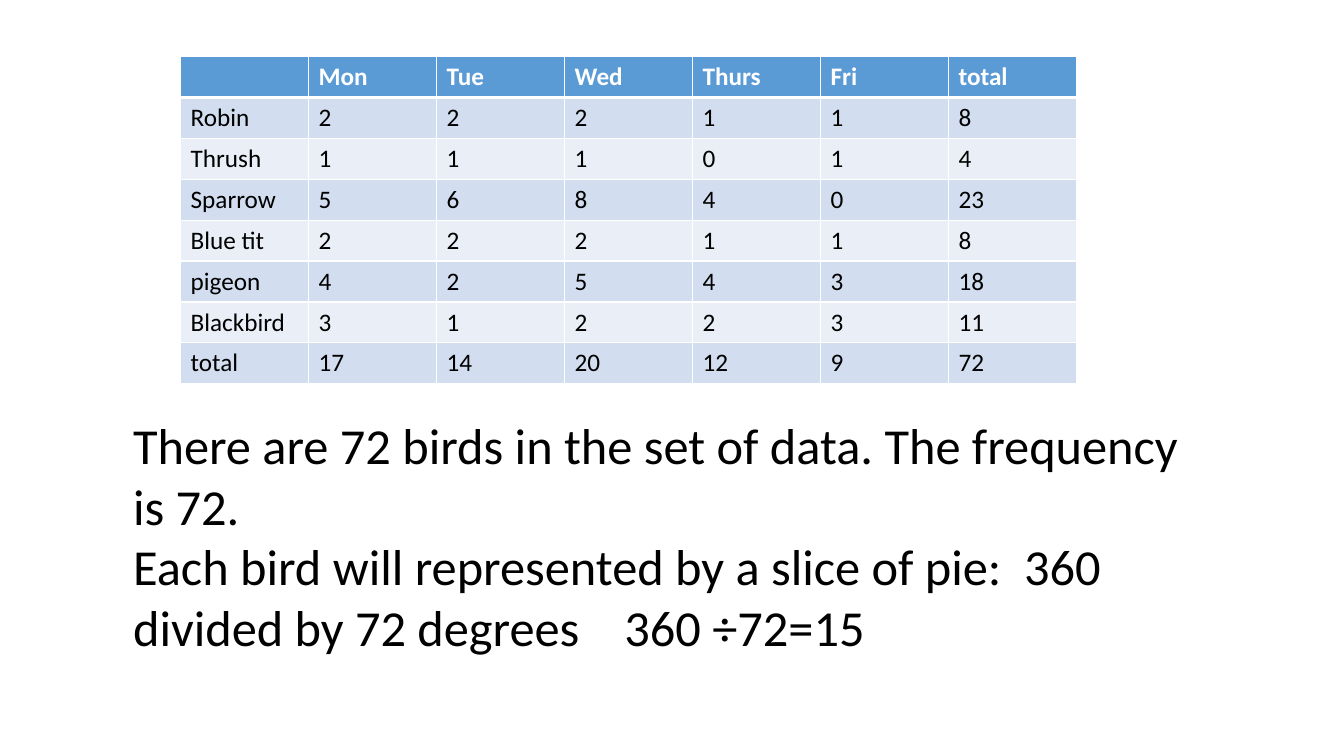
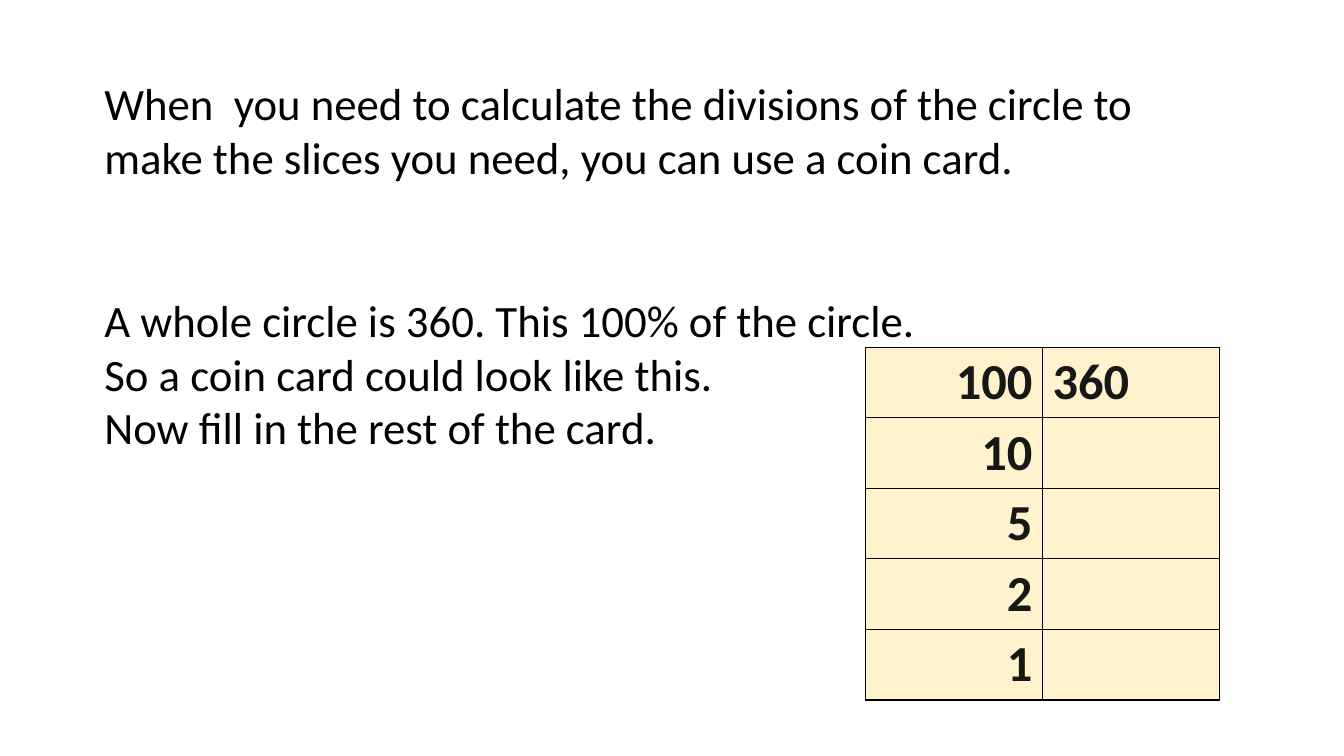
from lxml.etree import SubElement
from pptx import Presentation
from pptx.dml.color import RGBColor
from pptx.enum.text import MSO_ANCHOR, PP_ALIGN
from pptx.oxml.ns import qn
from pptx.util import Pt

FONT = "Calibri"
COLORS = {
    "text": "000000",
    "white": "FFFFFF",
    "header": "5B9BD5",
    "band_dark": "D2DEEF",
    "band_light": "EAEFF7",
    "card": "FFF2CC",
    "card_text": "181717",
}
BIRD_ROWS = [
    ["", "Mon", "Tue", "Wed", "Thurs", "Fri", "total"],
    ["Robin", 2, 2, 2, 1, 1, 8],
    ["Thrush", 1, 1, 1, 0, 1, 4],
    ["Sparrow", 5, 6, 8, 4, 0, 23],
    ["Blue tit", 2, 2, 2, 1, 1, 8],
    ["pigeon", 4, 2, 5, 4, 3, 18],
    ["Blackbird", 3, 1, 2, 2, 3, 11],
    ["total", 17, 14, 20, 12, 9, 72],
]
COIN_ROWS = [[100, 360], [10, ""], [5, ""], [2, ""], [1, ""]]


def rgb(name):
    return RGBColor.from_string(COLORS[name])


def add_run(p, text, size, color, bold=False):
    r = p.add_run()
    r.text = text
    r.font.name = FONT
    r.font.size = Pt(size)
    r.font.bold = bold
    r.font.color.rgb = rgb(color)


def add_text(slide, box, paragraphs, size, tab=None):
    """Each paragraph is a pair: text, space before."""
    tf = slide.shapes.add_textbox(*map(Pt, box)).text_frame
    tf.word_wrap = True
    for i, (text, gap) in enumerate(paragraphs):
        p = tf.paragraphs[0] if i == 0 else tf.add_paragraph()
        p.space_before = Pt(gap)
        if tab:
            tabs = SubElement(p._p.get_or_add_pPr(), qn("a:tabLst"))
            SubElement(tabs, qn("a:tab"), pos=str(Pt(tab)), algn="l")
        add_run(p, text, size, "text")


def set_borders(cell, color, top=1, bottom=1):
    tc_pr = cell._tc.get_or_add_tcPr()
    for side, width in (("L", 1), ("R", 1), ("T", top), ("B", bottom)):
        ln = SubElement(tc_pr, qn(f"a:ln{side}"), w=str(Pt(width)))
        fill = SubElement(ln, qn("a:solidFill"))
        SubElement(fill, qn("a:srgbClr"), val=COLORS[color])


def add_grid(slide, box, rows, style_cell):
    """Equal rows and columns; style_cell(cell, row, col, text) finishes each."""
    n_rows, n_cols = len(rows), len(rows[0])
    table = slide.shapes.add_table(n_rows, n_cols, *map(Pt, box)).table
    table.first_row = table.horz_banding = False
    for column in table.columns:
        column.width = Pt(box[2] / n_cols)
    for row in table.rows:
        row.height = Pt(box[3] / n_rows)
    for i, values in enumerate(rows):
        for j, value in enumerate(values):
            style_cell(table.cell(i, j), i, j, str(value))


def style_bird_cell(cell, row, col, text):
    header = row == 0
    set_borders(cell, "white", top=3 if row == 1 else 1, bottom=3 if header else 1)
    cell.fill.solid()
    band = "band_dark" if row % 2 else "band_light"
    cell.fill.fore_color.rgb = rgb("header" if header else band)
    if text:
        add_run(cell.text_frame.paragraphs[0], text, 18,
                "white" if header else "text", bold=header)


def style_coin_cell(cell, row, col, text):
    set_borders(cell, "text")
    cell.fill.solid()
    cell.fill.fore_color.rgb = rgb("card")
    cell.margin_top = cell.margin_bottom = Pt(3)
    cell.vertical_anchor = MSO_ANCHOR.MIDDLE
    p = cell.text_frame.paragraphs[0]
    p.alignment = PP_ALIGN.RIGHT if col == 0 else PP_ALIGN.LEFT
    if text:
        add_run(p, text, 36, "card_text", bold=True)


def build_bird_slide(slide):
    # Bird count
    add_grid(slide, (129, 40.5, 640, 233.6), BIRD_ROWS, style_bird_cell)
    # Explanation
    add_text(slide, (88, 292.5, 775, 181.5), [
        ("There are 72 birds in the set of data. The frequency is 72.", 0),
        ("Each bird will represented by a slice of pie:  360 divided by "
         "72 degrees\t360 ÷72=15", 0),
    ], 36, tab=351)


def build_coin_slide(slide):
    # Instructions
    add_text(slide, (67.5, 50.5, 811, 300), [
        ("When  you need to calculate the divisions of the circle to make "
         "the slices you need, you can use a coin card.", 0),
        ("A whole circle is 360. This 100% of the circle.", 78),
        ("So a coin card could look like this.", 0),
        ("Now fill in the rest of the card.", 0),
    ], 32)
    # Coin card
    add_grid(slide, (618.5, 248, 252.5, 252), COIN_ROWS, style_coin_cell)


def main():
    prs = Presentation()
    prs.slide_width, prs.slide_height = Pt(960), Pt(540)
    for build in (build_bird_slide, build_coin_slide):
        build(prs.slides.add_slide(prs.slide_layouts[6]))
    prs.save("out.pptx")


if __name__ == "__main__":
    main()
